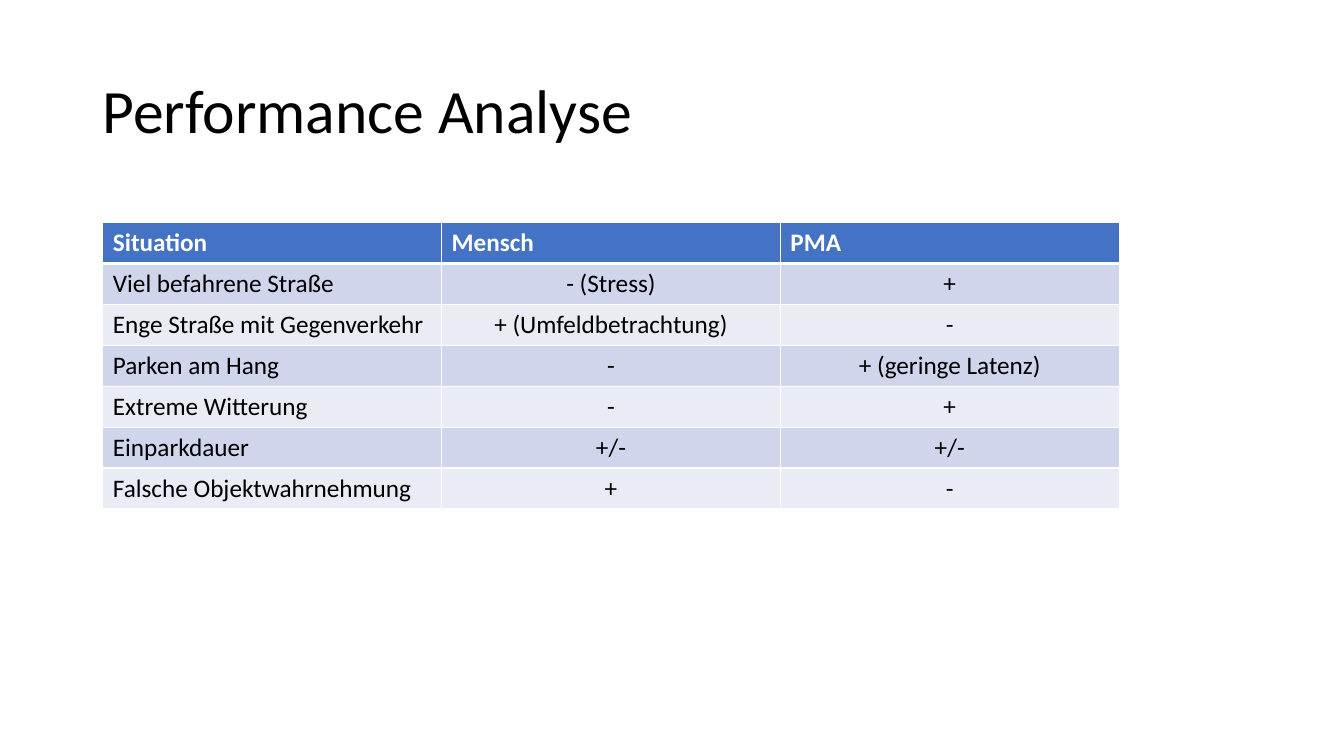
"""Build the slide that compares human and PMA parking performance."""
from lxml.etree import SubElement
from pptx import Presentation
from pptx.dml.color import RGBColor
from pptx.enum.text import MSO_ANCHOR, PP_ALIGN
from pptx.oxml.ns import qn
from pptx.util import Inches, Pt

HEADING = "Performance Analyse"
RATINGS = [
    ("Situation", "Mensch", "PMA"),
    ("Viel befahrene Straße", "- (Stress)", "+"),
    ("Enge Straße mit Gegenverkehr", "+ (Umfeldbetrachtung)", "-"),
    ("Parken am Hang", "-", "+ (geringe Latenz)"),
    ("Extreme Witterung", "-", "+"),
    ("Einparkdauer", "+/-", "+/-"),
    ("Falsche Objektwahrnehmung", "+", "-"),
]

FONT = "Calibri"
BLACK = RGBColor(0x00, 0x00, 0x00)
WHITE = RGBColor(0xFF, 0xFF, 0xFF)
HEADER_BLUE = RGBColor(0x44, 0x72, 0xC4)
BANDS = (RGBColor(0xE9, 0xEB, 0xF5), RGBColor(0xCF, 0xD5, 0xEA))
COLUMN_WIDTH = 3.36
ROW_HEIGHT = 2.84 / len(RATINGS)


def write(paragraph, words, size, color, bold=False):
    run = paragraph.add_run()
    run.text = words
    run.font.name = FONT
    run.font.size = Pt(size)
    run.font.bold = bold
    run.font.color.rgb = color


def add_borders(cell, top, bottom):
    properties = cell._tc.get_or_add_tcPr()
    for side, width in (("L", 1), ("R", 1), ("T", top), ("B", bottom)):
        border = SubElement(properties, qn(f"a:ln{side}"), w=str(Pt(width)))
        fill = SubElement(border, qn("a:solidFill"))
        SubElement(fill, qn("a:srgbClr"), val=str(WHITE))


def add_heading(slide):
    heading = slide.shapes.add_textbox(Inches(0.92), Inches(0.4), Inches(11.5), Inches(1.45))
    frame = heading.text_frame
    frame.word_wrap = True
    frame.vertical_anchor = MSO_ANCHOR.MIDDLE
    frame.paragraphs[0].line_spacing = 0.9
    write(frame.paragraphs[0], HEADING, 44, BLACK)


def add_ratings(slide):
    row_count, column_count = len(RATINGS), len(RATINGS[0])
    ratings = slide.shapes.add_table(
        row_count, column_count, Inches(1.02), Inches(2.21),
        Inches(COLUMN_WIDTH * column_count), Inches(ROW_HEIGHT * row_count)).table
    for column in ratings.columns:
        column.width = Inches(COLUMN_WIDTH)
    for r, situation in enumerate(RATINGS):
        ratings.rows[r].height = Inches(ROW_HEIGHT)
        header = r == 0
        for c, words in enumerate(situation):
            cell = ratings.cell(r, c)
            add_borders(cell, 3 if r == 1 else 1, 3 if header else 1)
            cell.fill.solid()
            cell.fill.fore_color.rgb = HEADER_BLUE if header else BANDS[r % 2]
            paragraph = cell.text_frame.paragraphs[0]
            paragraph.alignment = PP_ALIGN.LEFT if header or c == 0 else PP_ALIGN.CENTER
            write(paragraph, words, 18, WHITE if header else BLACK, header)


def main():
    deck = Presentation()
    deck.slide_width, deck.slide_height = Inches(13.33), Inches(7.5)
    slide = deck.slides.add_slide(deck.slide_layouts[6])
    add_heading(slide)
    add_ratings(slide)
    deck.save("out.pptx")


if __name__ == "__main__":
    main()
